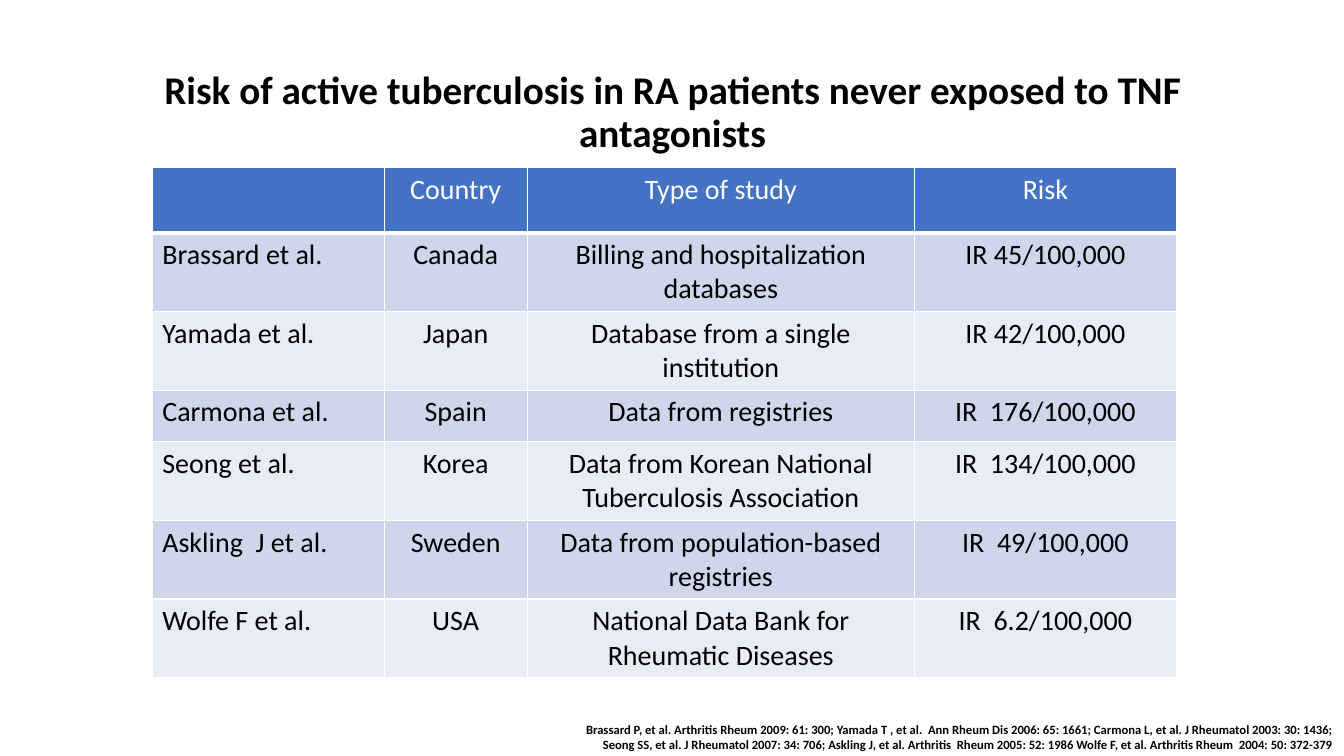
import pptx
import pptx.util
import pptx.dml.color
import pptx.enum.text
import pptx.oxml
import pptx.oxml.ns
from pptx.util import Inches

COLORS = {"text": "000000", "white": "FFFFFF", "header": "4472C4",
          "odd": "CFD5EA", "even": "E9EBF5"}
ALIGN = pptx.enum.text.PP_ALIGN
MIDDLE = pptx.enum.text.MSO_ANCHOR.MIDDLE

TITLE = "Risk of active tuberculosis in RA patients never exposed to TNF antagonists"
STUDIES = [
    ("", "Country", "Type of study", "Risk"),
    ("Brassard et al.", "Canada", "Billing and hospitalization databases", "IR 45/100,000"),
    ("Yamada et al.", "Japan", "Database from a single institution", "IR 42/100,000"),
    ("Carmona et al.", "Spain", "Data from registries", "IR  176/100,000"),
    ("Seong et al.", "Korea", "Data from Korean National Tuberculosis Association",
     "IR  134/100,000"),
    ("Askling  J et al.", "Sweden", "Data from population-based registries",
     "IR  49/100,000"),
    ("Wolfe F et al.", "USA", "National Data Bank for Rheumatic Diseases",
     "IR  6.2/100,000"),
]
COLUMN_WIDTHS = [2.3, 1.42, 3.84, 2.6]
ROW_HEIGHTS = [0.65, 0.76, 0.76, 0.51, 0.76, 0.76, 0.76]
REFERENCES = (
    "Brassard P, et al. Arthritis Rheum 2009: 61: 300; "
    "Yamada T , et al.  Ann Rheum Dis 2006: 65: 1661; "
    "Carmona L, et al. J Rheumatol 2003: 30: 1436; "
    "Seong SS, et al. J Rheumatol 2007: 34: 706; "
    "Askling J, et al. Arthritis  Rheum 2005: 52: 1986 "
    "Wolfe F, et al. Arthritis Rheum  2004: 50: 372-379")


def rgb(name):
    """Return the named colour."""
    return pptx.dml.color.RGBColor.from_string(COLORS[name])


def write(text_frame, text, size=20, color="text", bold=False,
          align=ALIGN.CENTER, line_spacing=None):
    """Fill a text frame with one formatted paragraph."""
    text_frame.word_wrap = True
    paragraph = text_frame.paragraphs[0]
    paragraph.alignment = align
    paragraph.line_spacing = line_spacing
    run = paragraph.add_run()
    run.text = text
    run.font.name = "Calibri"
    run.font.size = pptx.util.Pt(size)
    run.font.bold = bold
    run.font.color.rgb = rgb(color)


def set_borders(cell, bottom_width):
    """Draw white cell borders with the given bottom width in points."""
    properties = cell._tc.get_or_add_tcPr()
    widths = {"lnL": 1, "lnR": 1, "lnT": 1, "lnB": bottom_width}
    for position, (tag, width) in enumerate(widths.items()):
        properties.insert(position, pptx.oxml.parse_xml(
            f'<a:{tag} {pptx.oxml.ns.nsdecls("a")} w="{pptx.util.Pt(width)}">'
            f'<a:solidFill><a:srgbClr val="{COLORS["white"]}"/></a:solidFill>'
            f'</a:{tag}>'))


class SlideBuilder:
    """Hold the current slide and add its elements."""

    def __init__(self, presentation):
        """Start a slide with only a title placeholder."""
        self.slide = presentation.slides.add_slide(presentation.slide_layouts[5])

    def title(self, text, left, top, width, height):
        """Place and format the title."""
        shape = self.slide.shapes.title
        shape.left, shape.top = Inches(left), Inches(top)
        shape.width, shape.height = Inches(width), Inches(height)
        shape.text_frame.vertical_anchor = MIDDLE
        write(shape.text_frame, text, size=28, bold=True, line_spacing=0.9)

    def table(self, rows, left, top, widths, heights):
        """Add a banded table with a coloured header row."""
        table = self.slide.shapes.add_table(
            len(rows), len(widths), Inches(left), Inches(top),
            Inches(sum(widths)), Inches(sum(heights))).table
        for column, width in zip(table.columns, widths):
            column.width = Inches(width)
        for row, height in zip(table.rows, heights):
            row.height = Inches(height)
        for row_index, texts in enumerate(rows):
            is_header = row_index == 0
            band = "header" if is_header else ("even", "odd")[row_index % 2]
            for column_index, text in enumerate(texts):
                cell = table.cell(row_index, column_index)
                cell.fill.solid()
                cell.fill.fore_color.rgb = rgb(band)
                set_borders(cell, 3 if is_header else 1)
                write(cell.text_frame, text,
                      color="white" if is_header else "text",
                      align=ALIGN.CENTER if column_index else ALIGN.LEFT)

    def references(self, text, left, top, width, height):
        """Add the right-aligned reference note."""
        shape = self.slide.shapes.add_textbox(
            Inches(left), Inches(top), Inches(width), Inches(height))
        shape.text_frame.vertical_anchor = MIDDLE
        write(shape.text_frame, text, size=9, bold=True, align=ALIGN.RIGHT)


def main():
    """Build and save the slide."""
    presentation = pptx.Presentation()
    presentation.slide_width = Inches(13.33)
    presentation.slide_height = Inches(7.5)
    builder = SlideBuilder(presentation)
    builder.title(TITLE, 0.92, 0.4, 11.5, 1.45)
    builder.table(STUDIES, 1.51, 1.66, COLUMN_WIDTHS, ROW_HEIGHTS)
    builder.references(REFERENCES, 5.65, 7.11, 7.66, 0.41)
    presentation.save("out.pptx")


if __name__ == "__main__":
    main()
